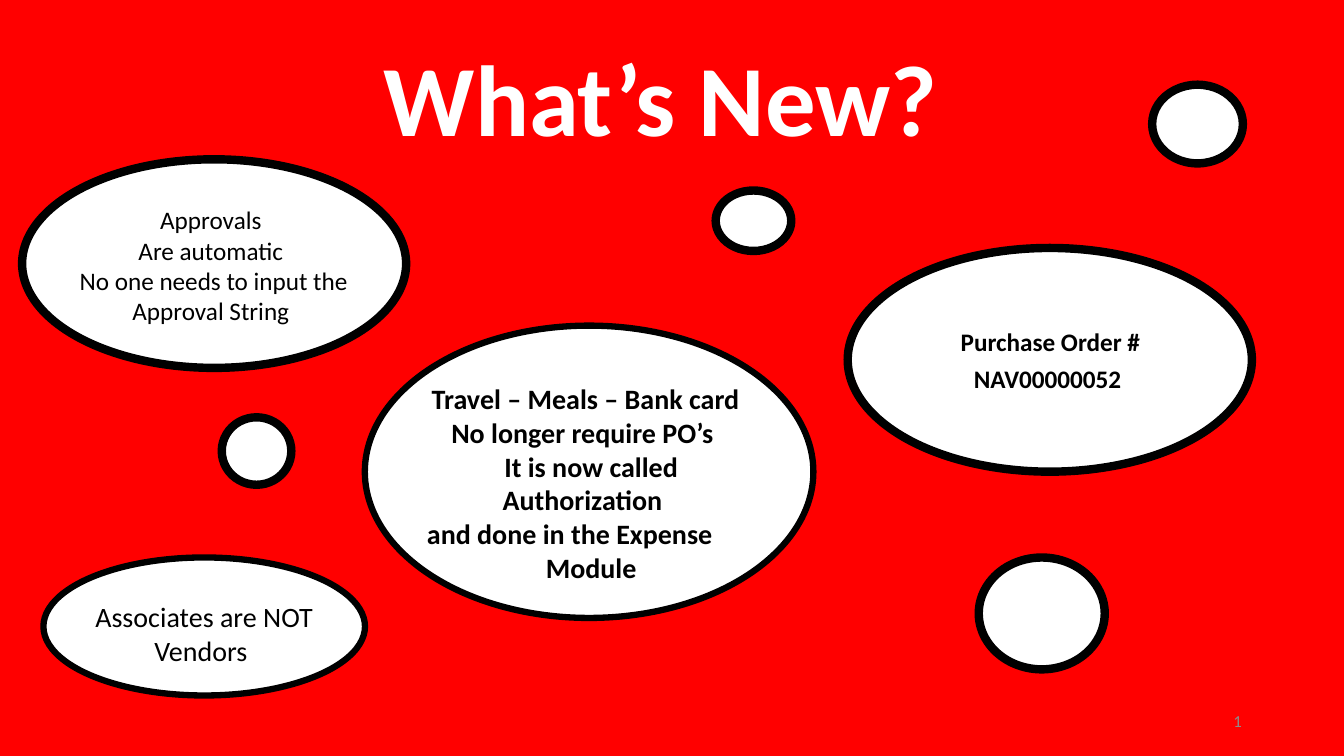
from dataclasses import dataclass

from pptx import Presentation
from pptx.dml.color import RGBColor
from pptx.enum.shapes import MSO_SHAPE
from pptx.enum.text import MSO_ANCHOR, MSO_AUTO_SIZE, PP_ALIGN
from pptx.slide import Slide
from pptx.util import Pt

CONNECTOR, ELLIPSE = MSO_SHAPE.FLOWCHART_CONNECTOR, MSO_SHAPE.OVAL
LEFT, CENTER, RIGHT = PP_ALIGN.LEFT, PP_ALIGN.CENTER, PP_ALIGN.RIGHT
TOP, MIDDLE = MSO_ANCHOR.TOP, MSO_ANCHOR.MIDDLE
FIT_SHAPE, FIXED = MSO_AUTO_SIZE.SHAPE_TO_FIT_TEXT, MSO_AUTO_SIZE.NONE

RED, WHITE, BLACK, GRAY = "FF0000", "FFFFFF", "000000", "8C8C8C"
FONT = "Calibri"

Box = tuple[float, float, float, float]


@dataclass(frozen=True)
class Bubble:
    box: Box
    line_width: float = 6
    shape: MSO_SHAPE = CONNECTOR


@dataclass(frozen=True)
class Line:
    text: str
    align: PP_ALIGN = CENTER
    indent: float = 0
    space_before: float = 0
    spacing: float = 1.0


@dataclass(frozen=True)
class Message:
    box: Box
    lines: tuple[Line, ...]
    size: float
    bold: bool = False
    color: str = BLACK
    anchor: MSO_ANCHOR = TOP
    auto_size: MSO_AUTO_SIZE = FIT_SHAPE


BUBBLES = (
    Bubble((605.5, 177.1, 288.7, 159.8)),
    Bubble((15.8, 113.8, 274.3, 149)),
    Bubble((31, 398.2, 229.7, 98.6), 4.5),
    Bubble((699.1, 398.2, 90, 79.9)),
    Bubble((823, 60.5, 64.8, 56.2)),
    Bubble((511.2, 136.1, 54, 43.2)),
    Bubble((260.6, 232.6, 320.4, 208.8), 4.5, ELLIPSE),
    Bubble((158.4, 298.1, 49.7, 48.2)),
)

MESSAGES = (
    Message((120, 25.2, 720, 98.6), (Line("What’s New? ", spacing=0.9),),
            72, True, WHITE, MIDDLE, FIXED),
    Message((657.4, 229.7, 185.8, 55.4),
            (Line("Purchase Order #"), Line("NAV00000052 ", space_before=4.8)),
            18, True),
    Message((32.4, 142.6, 240.5, 94.3),
            (Line("Approvals "), Line("Are automatic "),
             Line("No one needs to input the Approval String ")), 18),
    Message((42.5, 424.8, 206.6, 55.4),
            (Line("Associates are NOT Vendors "),), 20),
    Message((295.9, 269.3, 244.8, 152.6),
            (Line("Travel – Meals – Bank card"), Line("No longer require PO’s "),
             Line("It is now called", indent=8), Line("Authorization "),
             Line("and done in the Expense", LEFT, 2), Line("Module", indent=8)),
            20, True),
    Message((678.2, 500.4, 216, 28.8), (Line("1", RIGHT),),
            12, color=GRAY, anchor=MIDDLE, auto_size=FIXED),
)


def rgb(color: str) -> RGBColor:
    return RGBColor.from_string(color)


def apply(target: object, values: dict[str, object]) -> None:
    """Set each named attribute of the target."""
    for name, value in values.items():
        setattr(target, name, value)


def draw_bubble(slide: Slide, bubble: Bubble) -> None:
    oval = slide.shapes.add_shape(bubble.shape, *map(Pt, bubble.box))
    oval.shadow.inherit = False
    oval.fill.solid()
    oval.fill.fore_color.rgb = rgb(WHITE)
    oval.line.color.rgb = rgb(BLACK)
    oval.line.width = Pt(bubble.line_width)


def draw_message(slide: Slide, message: Message) -> None:
    frame = slide.shapes.add_textbox(*map(Pt, message.box)).text_frame
    apply(frame, {"word_wrap": True, "auto_size": message.auto_size,
                  "vertical_anchor": message.anchor})
    for index, line in enumerate(message.lines):
        paragraph = frame.add_paragraph() if index else frame.paragraphs[0]
        apply(paragraph, {"alignment": line.align, "line_spacing": line.spacing,
                          "space_before": Pt(line.space_before)})
        if line.indent:
            paragraph._p.get_or_add_pPr().set("marL", str(Pt(line.indent)))
        run = paragraph.add_run()
        run.text = line.text
        apply(run.font, {"name": FONT, "size": Pt(message.size), "bold": message.bold})
        run.font.color.rgb = rgb(message.color)


def main() -> None:
    deck = Presentation()
    apply(deck, {"slide_width": Pt(960), "slide_height": Pt(540)})
    slide = deck.slides.add_slide(deck.slide_layouts[6])
    slide.background.fill.solid()
    slide.background.fill.fore_color.rgb = rgb(RED)
    for bubble in BUBBLES:
        draw_bubble(slide, bubble)
    for message in MESSAGES:
        draw_message(slide, message)
    deck.save("out.pptx")


if __name__ == "__main__":
    main()
